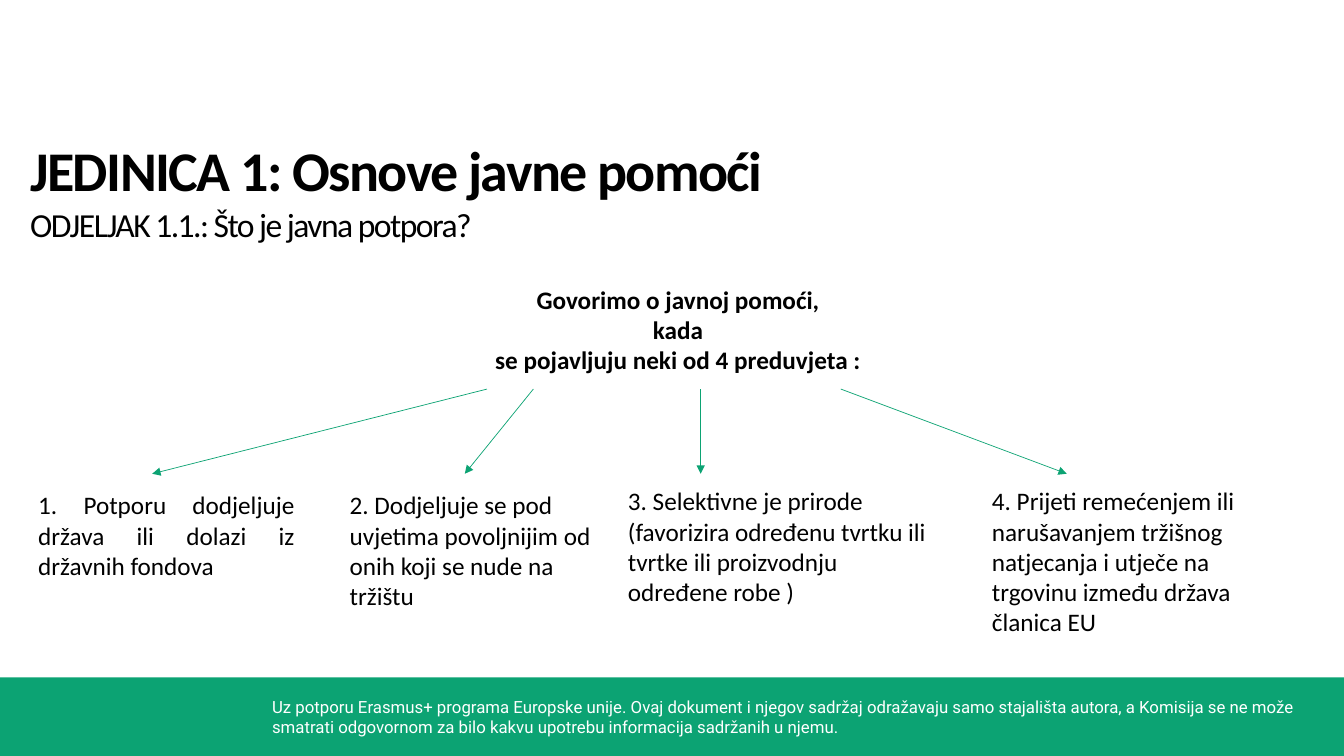
from lxml.etree import SubElement
from pptx import Presentation
from pptx.dml.color import RGBColor
from pptx.enum.shapes import MSO_CONNECTOR, MSO_SHAPE
from pptx.enum.text import MSO_ANCHOR, MSO_AUTO_SIZE, PP_ALIGN
from pptx.oxml.ns import qn
from pptx.util import Inches, Pt

GREEN, BLACK, WHITE = "0CA373", "000000", "FFFFFF"


def color(code):
    return RGBColor.from_string(code)


class Deck:
    """Holds the text style and the current slide."""

    font = "Calibri"

    def __init__(self):
        self.prs = Presentation()
        self.prs.slide_width = Inches(13.33)
        self.prs.slide_height = Inches(7.5)
        self.slide = self.prs.slides.add_slide(self.prs.slide_layouts[5])

    def run(self, para, text, size=18, bold=False, ink=BLACK, font=None):
        run = para.add_run()
        run.text = text
        run.font.name = font or self.font
        run.font.size = Pt(size)
        run.font.bold = bold
        run.font.color.rgb = color(ink)
        return run

    def title(self, lines, left, top, width, height):
        shape = self.slide.shapes.title
        shape.left, shape.top = Inches(left), Inches(top)
        shape.width, shape.height = Inches(width), Inches(height)
        frame = shape.text_frame
        frame.word_wrap = True
        frame.auto_size = MSO_AUTO_SIZE.NONE
        frame.vertical_anchor = MSO_ANCHOR.TOP
        for i, (text, size, bold) in enumerate(lines):
            para = frame.add_paragraph() if i else frame.paragraphs[0]
            para.alignment = PP_ALIGN.LEFT
            if i:
                para.space_before = Pt(1.1)
            run = self.run(para, text, size, bold)
            run.font._element.set("spc", "-110")

    def text(self, lines, left, top, width, height, align=PP_ALIGN.LEFT, **style):
        box = self.slide.shapes.add_textbox(
            Inches(left), Inches(top), Inches(width), Inches(height))
        frame = box.text_frame
        frame.word_wrap = True
        for i, line in enumerate(lines):
            para = frame.add_paragraph() if i else frame.paragraphs[0]
            para.alignment = align
            self.run(para, line, **style)

    def band(self, left, top, width, height, fill):
        shape = self.slide.shapes.add_shape(
            MSO_SHAPE.RECTANGLE, Inches(left), Inches(top), Inches(width), Inches(height))
        shape.shadow.inherit = False
        shape.fill.solid()
        shape.fill.fore_color.rgb = color(fill)
        shape.line.fill.background()

    def arrow(self, x1, y1, x2, y2):
        link = self.slide.shapes.add_connector(
            MSO_CONNECTOR.STRAIGHT, Inches(x1), Inches(y1), Inches(x2), Inches(y2))
        link.line.color.rgb = color(GREEN)
        link.line.width = Pt(0.5)
        props = link._element.spPr
        SubElement(props.find(qn("a:ln")), qn("a:tailEnd"), type="triangle")
        SubElement(props, qn("a:effectLst"))


def main():
    deck = Deck()
    deck.band(0, 6.72, 13.33, 0.78, GREEN)
    deck.text(
        ["Uz potporu Erasmus+ programa Europske unije. Ovaj dokument i njegov sadržaj "
         "odražavaju samo stajališta autora, a Komisija se ne može smatrati odgovornom "
         "za bilo kakvu upotrebu informacija sadržanih u njemu."],
        2.6, 6.86, 10.42, 0.5, size=12, ink=WHITE, font="Roboto")
    deck.title(
        [("JEDINICA 1: Osnove javne pomoći", 40, True),
         ("ODJELJAK 1.1.: Što je javna potpora?", 24, False)],
        0.2, 1.29, 11.83, 1.19)
    deck.text(
        ["Govorimo o javnoj pomoći,", "kada", "se pojavljuju neki od 4 preduvjeta :"],
        0.19, 2.77, 13.07, 1, PP_ALIGN.CENTER, bold=True)

    terms = [
        ("1. Potporu dodjeljuje država ili dolazi iz državnih fondova",
         0.28, 4.81, 2.74, PP_ALIGN.JUSTIFY),
        ("2. Dodjeljuje se pod uvjetima povoljnijim od onih koji se nude na tržištu",
         3.37, 4.81, 2.83, PP_ALIGN.LEFT),
        ("3. Selektivne je prirode (favorizira određenu tvrtku ili tvrtke ili "
         "proizvodnju određene robe )",
         6.13, 4.77, 3.16, PP_ALIGN.LEFT),
        ("4. Prijeti remećenjem ili narušavanjem tržišnog natjecanja i utječe na "
         "trgovinu između država članica EU",
         9.74, 4.77, 3.16, PP_ALIGN.LEFT),
    ]
    for term, left, top, width, align in terms:
        deck.text([term], left, top, width, 1.31, align)
    for start, end in [(4.83, 1.51), (5.29, 4.61), (6.95, 6.95), (8.34, 10.58)]:
        deck.arrow(start, 3.86, end, 4.7)
    deck.prs.save("out.pptx")


if __name__ == "__main__":
    main()
